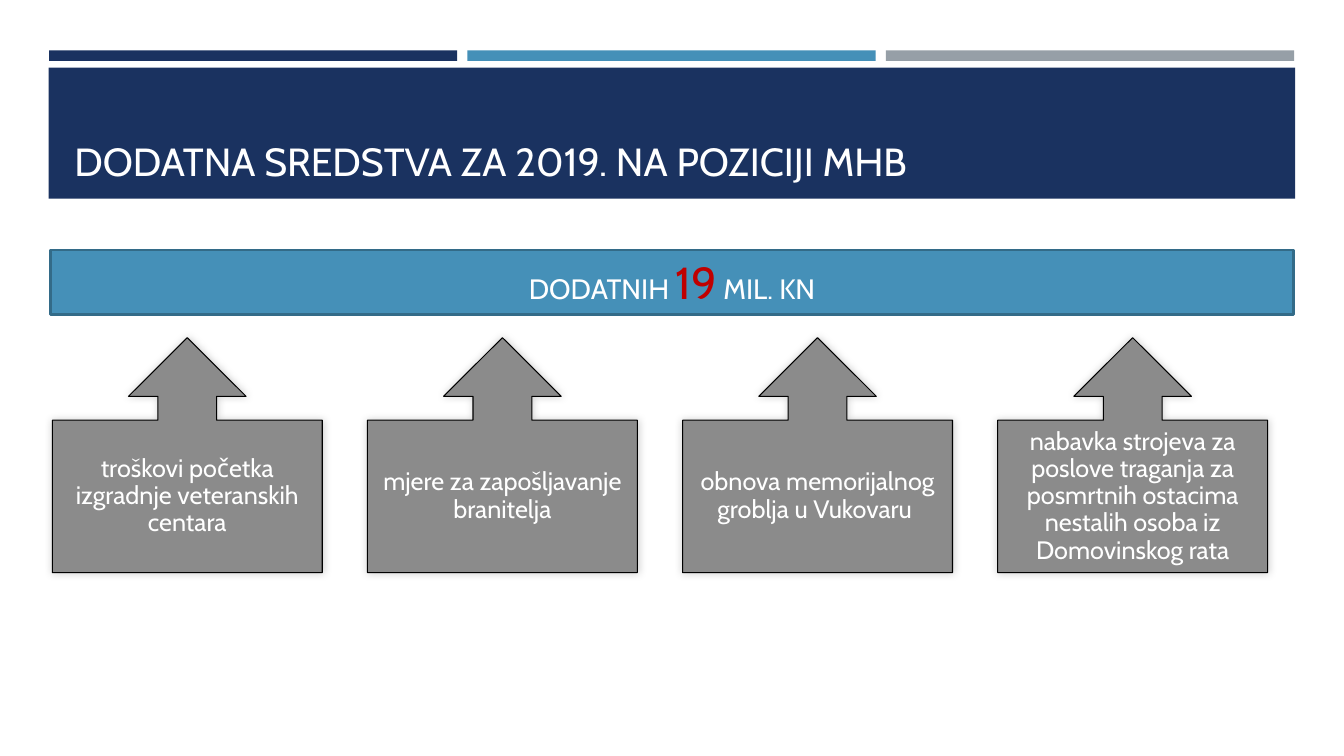
from dataclasses import dataclass

from lxml import etree
from pptx import Presentation
from pptx.dml.color import RGBColor
from pptx.enum.shapes import MSO_SHAPE
from pptx.enum.text import MSO_ANCHOR, MSO_AUTO_SIZE, PP_ALIGN
from pptx.oxml.ns import qn
from pptx.shapes.autoshape import Shape
from pptx.slide import Slide
from pptx.text.text import _Run
from pptx.util import Pt

RECTANGLE = MSO_SHAPE.RECTANGLE
TOP, MIDDLE, BOTTOM = MSO_ANCHOR.TOP, MSO_ANCHOR.MIDDLE, MSO_ANCHOR.BOTTOM
FIT_SHAPE = MSO_AUTO_SIZE.SHAPE_TO_FIT_TEXT
CENTER = PP_ALIGN.CENTER


@dataclass(frozen=True)
class Theme:
    font: str = "Cabin"
    navy: str = "1A3260"
    blue: str = "4590B8"
    blue_edge: str = "336B88"
    silver: str = "969FA7"
    gray: str = "8B8B8B"
    black: str = "000000"
    white: str = "FFFFFF"
    red: str = "C00000"
    title_size: float = 28
    banner_size: float = 20
    amount_size: float = 32
    callout_size: float = 18


@dataclass(frozen=True)
class Box:
    left: float
    top: float
    width: float
    height: float
    fill: str


@dataclass(frozen=True)
class Callout:
    left: float
    text: str


THEME = Theme()

# Header: three accent strips above the title band
STRIP_LEFT, STRIP_PITCH, STRIP_WIDTH = 35, 298.9, 291.6
STRIPS = [
    Box(STRIP_LEFT + index * STRIP_PITCH, 36, STRIP_WIDTH, 7.6, color)
    for index, color in enumerate((THEME.navy, THEME.blue, THEME.silver))
]
TITLE_BAND = Box(34.8, 48.4, 890.4, 93.6, THEME.navy)
BANNER = Box(36, 178.6, 888, 46.1, THEME.blue)

# Callouts: a box with an upward arrow on top
CALLOUT_LEFT, CALLOUT_PITCH, CALLOUT_WIDTH = 37.4, 225.1, 192.8
ARROW_TIP, ARROW_BASE, BOX_TOP, BOX_BOTTOM = 241.2, 283.1, 300.2, 409
HEAD_HALF, STEM_HALF = 42, 21
CALLOUT_MARGIN, CALLOUT_TOP_MARGIN = 5, 64
CALLOUTS = [
    Callout(CALLOUT_LEFT + index * CALLOUT_PITCH, text)
    for index, text in enumerate((
        "troškovi početka izgradnje veteranskih centara",
        "mjere za zapošljavanje branitelja",
        "obnova memorijalnog groblja u Vukovaru ",
        "nabavka strojeva za poslove traganja za posmrtnih ostacima "
        "nestalih osoba iz Domovinskog rata",
    ))
]


def style_run(run: _Run, size: float, color: str) -> None:
    run.font.name = THEME.font
    run.font.size = Pt(size)
    run.font.color.rgb = RGBColor.from_string(color)


def paint(shape: Shape, fill: str, line: str = "", line_width: float = 0) -> None:
    shape.shadow.inherit = False
    shape.fill.solid()
    shape.fill.fore_color.rgb = RGBColor.from_string(fill)
    if line:
        shape.line.color.rgb = RGBColor.from_string(line)
        shape.line.width = Pt(line_width)
    else:
        shape.line.fill.background()


def add_box(slide: Slide, box: Box, line: str = "", line_width: float = 0) -> Shape:
    shape = slide.shapes.add_shape(
        RECTANGLE, Pt(box.left), Pt(box.top), Pt(box.width), Pt(box.height)
    )
    paint(shape, box.fill, line, line_width)
    return shape


def add_soft_shadow(shape: Shape) -> None:
    effects = shape._element.spPr.find(qn("a:effectLst"))
    shadow = etree.SubElement(
        effects, qn("a:outerShdw"), blurRad=str(Pt(6)), dist="0", dir="13500000"
    )
    color = etree.SubElement(shadow, qn("a:srgbClr"), val=THEME.black)
    etree.SubElement(color, qn("a:alpha"), val="20000")


def add_title(slide: Slide, text: str) -> None:
    shape = slide.shapes.add_textbox(Pt(46.1), Pt(55.4), Pt(868.3), Pt(79.9))
    text_frame = shape.text_frame
    text_frame.word_wrap = True
    text_frame.vertical_anchor = BOTTOM
    text_frame.text = text
    style_run(text_frame.paragraphs[0].runs[0], THEME.title_size, THEME.white)


def add_banner(slide: Slide) -> None:
    text_frame = add_box(slide, BANNER, THEME.blue_edge, 1.75).text_frame
    text_frame.word_wrap = True
    text_frame.auto_size = FIT_SHAPE
    text_frame.vertical_anchor = TOP
    paragraph = text_frame.paragraphs[0]
    paragraph.alignment = CENTER
    for text, size, color in (
        ("DODATNIH ", THEME.banner_size, THEME.white),
        ("19", THEME.amount_size, THEME.red),
        (" MIL. KN", THEME.banner_size, THEME.white),
    ):
        run = paragraph.add_run()
        run.text = text
        style_run(run, size, color)


def add_callout(slide: Slide, callout: Callout) -> None:
    # Outline, mirrored around the arrow tip
    center = callout.left + CALLOUT_WIDTH / 2
    left_half = [
        (-CALLOUT_WIDTH / 2, BOX_BOTTOM),
        (-CALLOUT_WIDTH / 2, BOX_TOP),
        (-STEM_HALF, BOX_TOP),
        (-STEM_HALF, ARROW_BASE),
        (-HEAD_HALF, ARROW_BASE),
    ]
    right_half = [(-offset, y) for offset, y in reversed(left_half)]
    outline = [
        (Pt(center + offset), Pt(y))
        for offset, y in [*left_half, (0, ARROW_TIP), *right_half]
    ]
    builder = slide.shapes.build_freeform(*outline[0])
    builder.add_line_segments(outline[1:], close=True)
    shape = builder.convert_to_shape()
    paint(shape, THEME.gray, THEME.black, 0.75)
    add_soft_shadow(shape)

    # Text, kept below the arrow
    text_frame = shape.text_frame
    text_frame.word_wrap = True
    text_frame.vertical_anchor = MIDDLE
    text_frame.margin_left = text_frame.margin_right = Pt(CALLOUT_MARGIN)
    text_frame.margin_top = Pt(CALLOUT_TOP_MARGIN)
    text_frame.margin_bottom = Pt(CALLOUT_MARGIN)
    text_frame.text = callout.text
    paragraph = text_frame.paragraphs[0]
    paragraph.alignment = CENTER
    paragraph.line_spacing = 0.9
    style_run(paragraph.runs[0], THEME.callout_size, THEME.white)


def main() -> None:
    presentation = Presentation()
    presentation.slide_width, presentation.slide_height = Pt(960), Pt(540)
    slide = presentation.slides.add_slide(presentation.slide_layouts[6])
    for box in [*STRIPS, TITLE_BAND]:
        add_box(slide, box)
    add_title(slide, "DODATNA SREDSTVA ZA 2019. NA POZICIJI MHB")
    add_banner(slide)
    for callout in CALLOUTS:
        add_callout(slide, callout)
    presentation.save("out.pptx")


if __name__ == "__main__":
    main()
